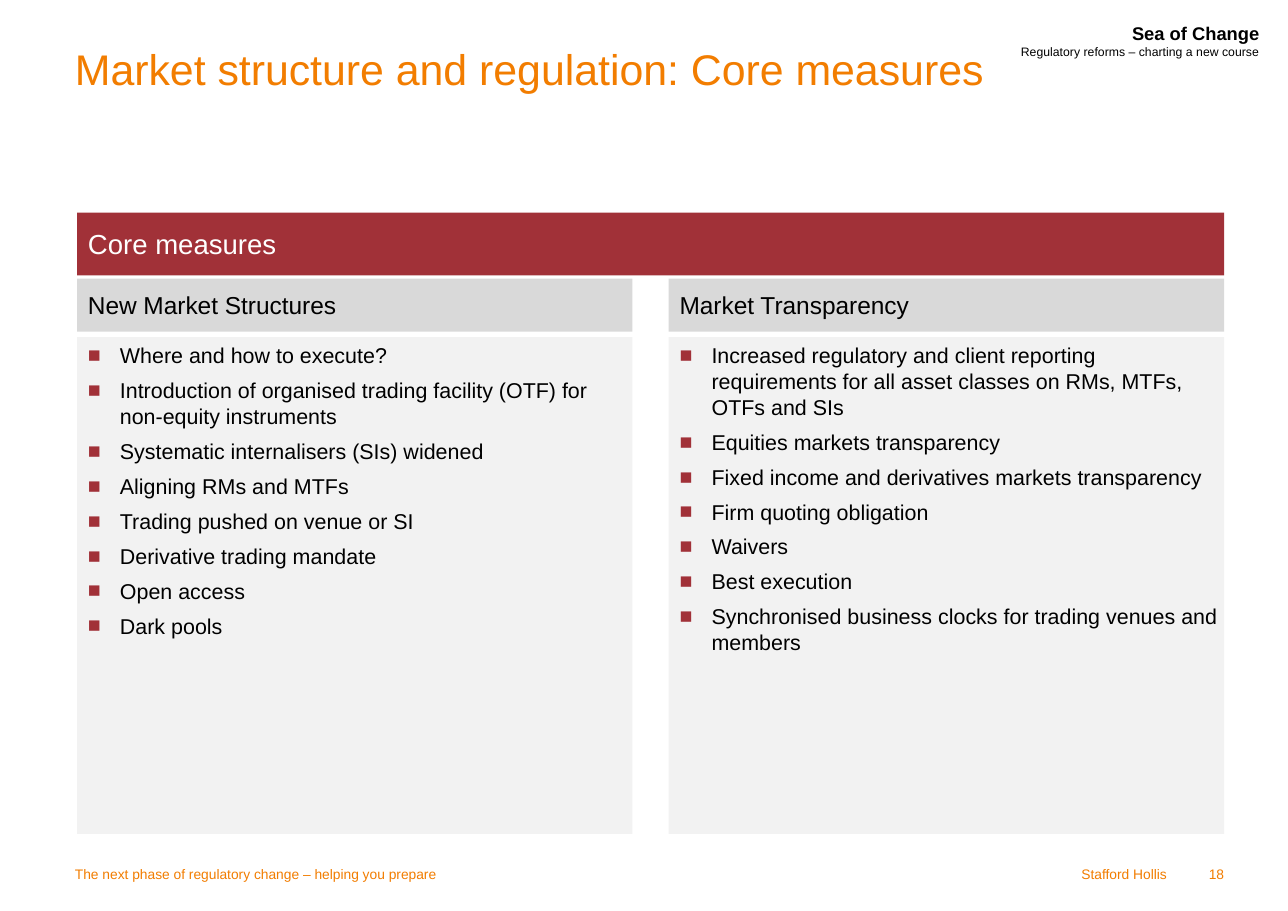
from lxml.etree import SubElement
from pptx import Presentation
from pptx.dml.color import RGBColor
from pptx.enum.shapes import MSO_SHAPE
from pptx.enum.text import MSO_ANCHOR, MSO_AUTO_SIZE, PP_ALIGN
from pptx.oxml.ns import qn
from pptx.util import Pt

PX = 9144  # 100 px to the inch
ORANGE, RED, BLACK, WHITE = "F27D00", "A13138", "000000", "FFFFFF"
HEADING_GREY, BODY_GREY = "D9D9D9", "F2F2F2"
LEFT, COLUMN_WIDTH, COLUMN_STEP = 70, 504, 537
BULLET_INDENT = 29


def color(hex_string):
    return RGBColor.from_string(hex_string)


def write(paragraph, text, size, hex_string, align=PP_ALIGN.LEFT, bold=False):
    paragraph.alignment = align
    run = paragraph.add_run()
    run.text = text
    run.font.color.rgb = color(hex_string)
    for name, value in {"name": "Arial", "size": Pt(size), "bold": bold}.items():
        setattr(run.font, name, value)


presentation = Presentation()
presentation.slide_width, presentation.slide_height = 1169 * PX, 827 * PX
slide = presentation.slides.add_slide(presentation.slide_layouts[5])
wide_margins = {
    "margin_left": 11 * PX, "margin_right": 11 * PX,
    "margin_top": 6 * PX, "margin_bottom": 6 * PX, "word_wrap": True,
}

# Title
title = slide.shapes.title
title_box = {"left": 57, "top": 33, "width": 1054, "height": 138}
for name, value in title_box.items():
    setattr(title, name, value * PX)
title_format = {
    **wide_margins, "vertical_anchor": MSO_ANCHOR.TOP, "auto_size": MSO_AUTO_SIZE.NONE,
}
for name, value in title_format.items():
    setattr(title.text_frame, name, value)
write(title.text_frame.paragraphs[0],
      "Market structure and regulation: Core measures", 28, ORANGE)

# Event name at the top right
event = slide.shapes.add_textbox(898 * PX, 15 * PX, 255 * PX, 44 * PX)
event.text_frame.word_wrap = True
event.text_frame.auto_size = MSO_AUTO_SIZE.SHAPE_TO_FIT_TEXT
paragraph = event.text_frame.paragraphs[0]
write(paragraph, "Sea of Change", 12, BLACK, PP_ALIGN.RIGHT, bold=True)
paragraph.add_line_break()
write(paragraph, "Regulatory reforms – charting a new course", 8, BLACK, PP_ALIGN.RIGHT)

# Footer
footers = [
    (57, 751, "The next phase of regulatory change – helping you prepare", PP_ALIGN.LEFT),
    (808, 262, "Stafford Hollis", PP_ALIGN.RIGHT),
    (1070, 52, "18", PP_ALIGN.RIGHT),
]
for left, width, text, align in footers:
    footer = slide.shapes.add_textbox(left * PX, 776 * PX, width * PX, 35 * PX)
    for name, value in {**wide_margins, "vertical_anchor": MSO_ANCHOR.MIDDLE}.items():
        setattr(footer.text_frame, name, value)
    write(footer.text_frame.paragraphs[0], text, 9, ORANGE, align)

# Panels: a banner above two columns, each with a heading and a bulleted list
columns = [
    ("New Market Structures", [
        "Where and how to execute?",
        "Introduction of organised trading facility (OTF) for non-equity instruments",
        "Systematic internalisers (SIs) widened",
        "Aligning RMs and MTFs",
        "Trading pushed on venue or SI",
        "Derivative trading mandate",
        "Open access",
        "Dark pools",
    ]),
    ("Market Transparency", [
        "Increased regulatory and client reporting requirements for all asset classes "
        "on RMs, MTFs, OTFs and SIs",
        "Equities markets transparency",
        "Fixed income and derivatives markets transparency",
        "Firm quoting obligation",
        "Waivers",
        "Best execution",
        "Synchronised business clocks for trading venues and members",
    ]),
]
panels = [(LEFT, 193, COLUMN_STEP + COLUMN_WIDTH, 57, RED, ["Core measures"], 18, WHITE)]
for index, (heading, measures) in enumerate(columns):
    left = LEFT + index * COLUMN_STEP
    panels.append((left, 253, COLUMN_WIDTH, 48, HEADING_GREY, [heading], 16, BLACK))
    panels.append((left, 306, COLUMN_WIDTH, 451, BODY_GREY, measures, 14, BLACK))

for left, top, width, height, fill, lines, size, text_color in panels:
    panel = slide.shapes.add_shape(
        MSO_SHAPE.RECTANGLE, left * PX, top * PX, width * PX, height * PX)
    panel.shadow.inherit = False
    panel.fill.solid()
    panel.fill.fore_color.rgb = color(fill)
    panel.line.fill.background()
    frame = panel.text_frame
    frame.word_wrap = True
    is_list = len(lines) > 1
    frame.vertical_anchor = MSO_ANCHOR.TOP if is_list else MSO_ANCHOR.MIDDLE
    if is_list:
        frame.margin_right = 5 * PX
    for index, line in enumerate(lines):
        paragraph = frame.add_paragraph() if index else frame.paragraphs[0]
        write(paragraph, line, size, text_color)
        if is_list:
            paragraph.space_before = Pt(6)
            properties = paragraph._p.get_or_add_pPr()
            properties.set("marL", str(BULLET_INDENT * PX))
            properties.set("indent", str(-BULLET_INDENT * PX))
            bullet_color = SubElement(properties, qn("a:buClr"))
            SubElement(bullet_color, qn("a:srgbClr"), val=RED)
            SubElement(properties, qn("a:buFont"), typeface="Arial")
            SubElement(properties, qn("a:buChar"), char="■")

presentation.save("out.pptx")
